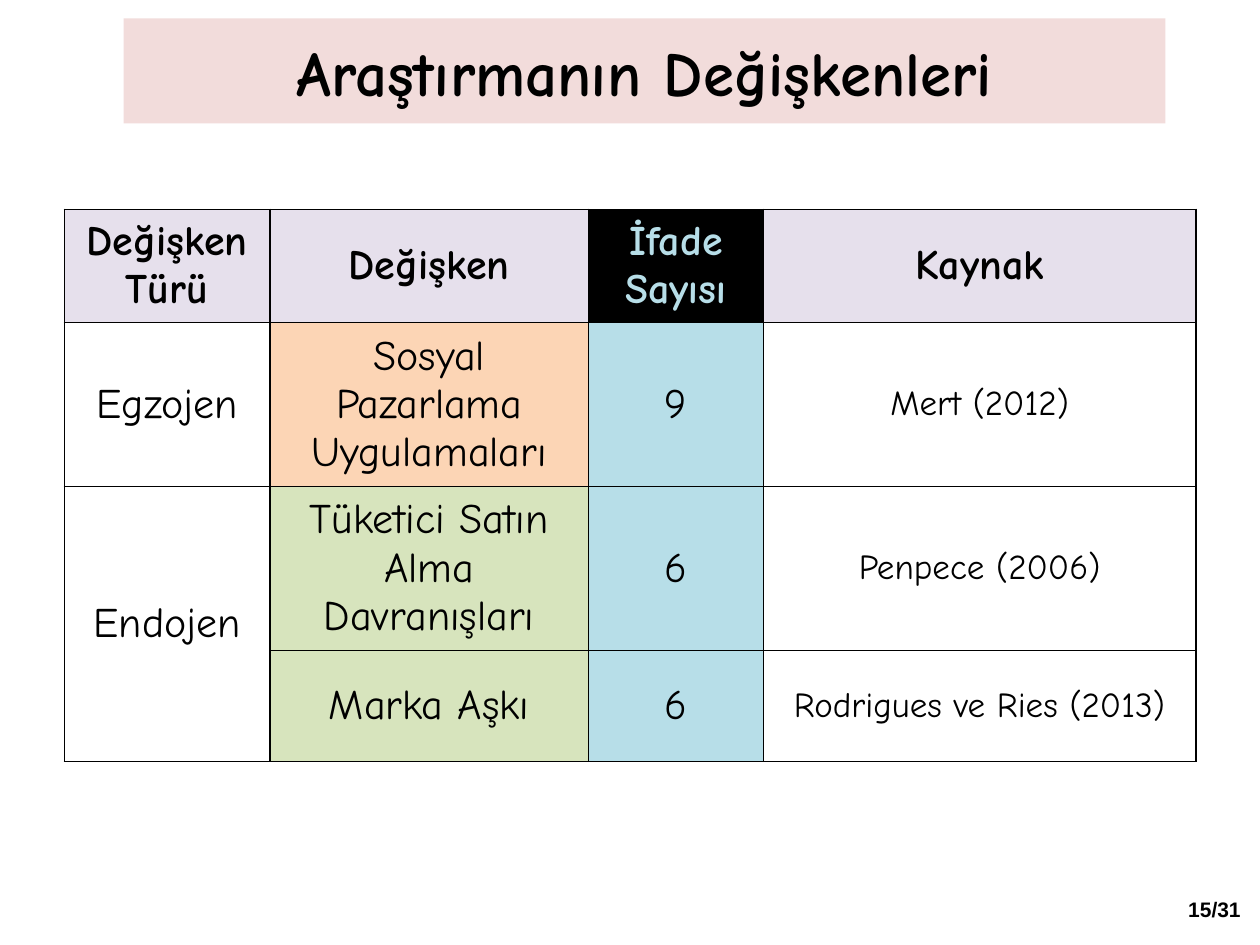
"""Build the slide that lists the research variables and their sources."""
from pptx import Presentation
from pptx.dml.color import RGBColor
from pptx.enum.text import MSO_ANCHOR, MSO_AUTO_SIZE, PP_ALIGN
from pptx.oxml.xmlchemy import OxmlElement
from pptx.util import Pt


def rgb(value):
    return RGBColor.from_string(value)


class Deck:
    font = "Comic Neue"
    black = "000000"
    border = Pt(1)

    def __init__(self, width, height):
        self.prs = Presentation()
        self.prs.slide_width, self.prs.slide_height = Pt(width), Pt(height)
        self.s = self.prs.slides.add_slide(self.prs.slide_layouts[5])

    def add_text(self, tf, text, size, color=black, **formats):
        p = tf.paragraphs[0]
        p.alignment = PP_ALIGN.CENTER
        r = p.add_run()
        r.text = text
        values = {"name": self.font, "size": Pt(size), "bold": False, **formats}
        for key, value in values.items():
            setattr(r.font, key, value)
        r.font.color.rgb = rgb(color)

    def title(self, text, box, fill):
        sp = self.s.shapes.title
        for key, value in zip(("left", "top", "width", "height"), box):
            setattr(sp, key, Pt(value))
        geom = OxmlElement("a:prstGeom")
        geom.set("prst", "flowChartAlternateProcess")
        geom.append(OxmlElement("a:avLst"))
        sp._element.spPr.append(geom)
        sp.fill.solid()
        sp.fill.fore_color.rgb = rgb(fill)
        tf = sp.text_frame
        tf.word_wrap = True
        tf.auto_size = MSO_AUTO_SIZE.SHAPE_TO_FIT_TEXT
        tf.vertical_anchor = MSO_ANCHOR.MIDDLE
        self.add_text(tf, text, 36, bold=True)

    def page_number(self, text, box):
        tf = self.s.shapes.add_textbox(*map(Pt, box)).text_frame
        tf.word_wrap = False
        tf.auto_size = MSO_AUTO_SIZE.SHAPE_TO_FIT_TEXT
        self.add_text(tf, text, 12, name="Arial", bold=True)

    def outline(self, cell):
        props = cell._tc.get_or_add_tcPr()
        for index, side in enumerate(("lnL", "lnR", "lnT", "lnB")):
            line = OxmlElement(f"a:{side}")
            line.set("w", str(self.border))
            fill = OxmlElement("a:solidFill")
            color = OxmlElement("a:srgbClr")
            color.set("val", self.black)
            fill.append(color)
            line.append(fill)
            props.insert(index, line)

    def cell(self, cell, text, fill, size, color, bold):
        cell.vertical_anchor = MSO_ANCHOR.MIDDLE
        if fill:
            cell.fill.solid()
            cell.fill.fore_color.rgb = rgb(fill)
        else:
            cell.fill.background()
        self.outline(cell)
        if text:
            self.add_text(cell.text_frame, text, size, color, bold=bold)

    def table(self, rows, fills, left, top, widths, heights):
        frame = self.s.shapes.add_table(
            len(rows), len(widths), Pt(left), Pt(top), Pt(sum(widths)), Pt(sum(heights)))
        table = frame.table
        table.first_row = table.horz_banding = False
        for column, width in zip(table.columns, widths):
            column.width = Pt(width)
        for row, height in zip(table.rows, heights):
            row.height = Pt(height)
        for i, (texts, colors) in enumerate(zip(rows, fills)):
            for j, (text, fill) in enumerate(zip(texts, colors)):
                size = 20 if i and j == len(widths) - 1 else 24
                color = "B7DEE8" if fill == self.black else self.black
                self.cell(table.cell(i, j), text, fill, size, color, bold=i == 0)
        return table


LILAC, ORANGE, GREEN, BLUE = "E6E0EC", "FCD5B5", "D7E4BD", "B7DEE8"
ROWS = [
    ("Değişken Türü", "Değişken", "İfade Sayısı", "Kaynak"),
    ("Egzojen", "Sosyal Pazarlama Uygulamaları", "9", "Mert (2012)"),
    ("Endojen", "Tüketici Satın Alma Davranışları", "6", "Penpece (2006)"),
    ("", "Marka Aşkı", "6", "Rodrigues ve Ries (2013)"),
]
FILLS = [
    (LILAC, LILAC, Deck.black, LILAC),
    (None, ORANGE, BLUE, None),
    (None, GREEN, BLUE, None),
    (None, GREEN, BLUE, None),
]


def main():
    deck = Deck(720, 540)
    deck.page_number("15/31", (671, 509, 46, 21.6))
    deck.title("Araştırmanın Değişkenleri", (70.6, 15, 595.4, 51), "F2DCDB")
    table = deck.table(ROWS, FILLS, 36.8, 119.6,
                       (117.4, 182.2, 100, 247), (63.4, 77, 55.4, 63.4))
    table.cell(2, 0).merge(table.cell(3, 0))
    deck.prs.save("out.pptx")


if __name__ == "__main__":
    main()
